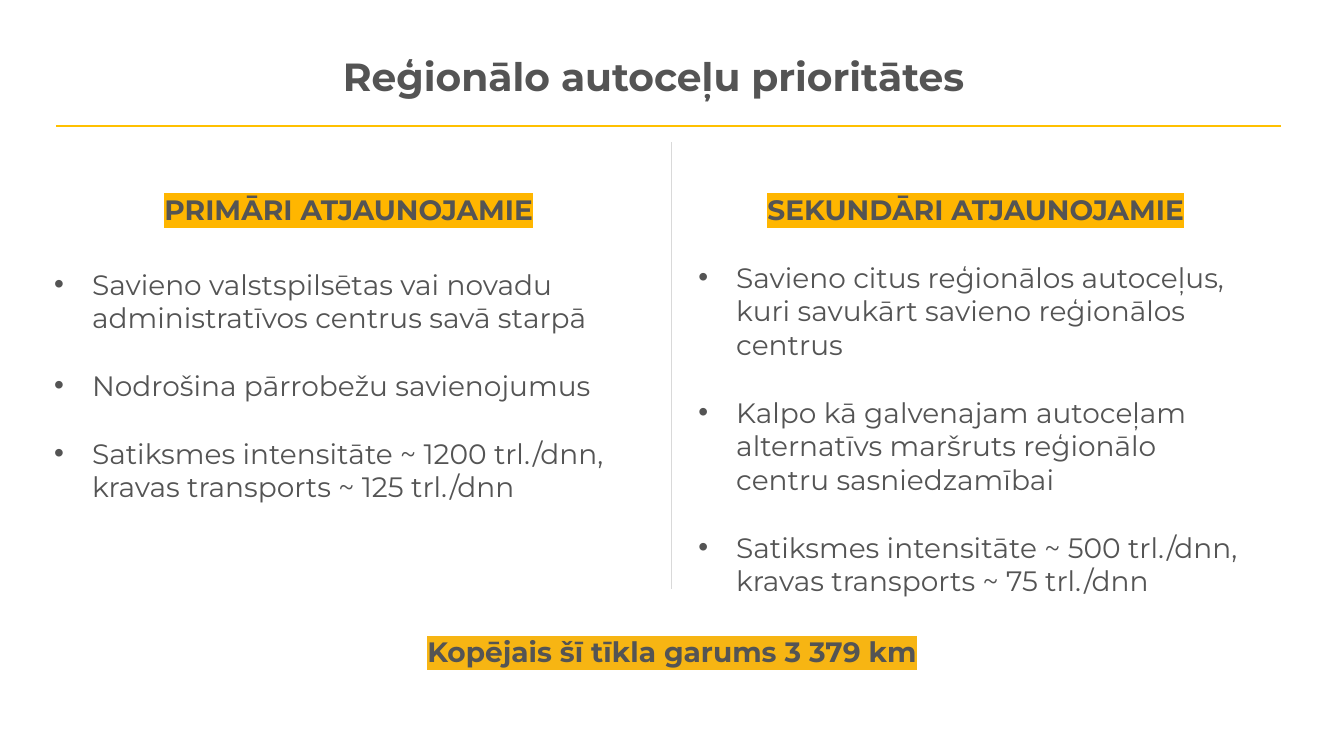
from lxml import etree
from pptx import Presentation
from pptx import util as u
from pptx.dml import color
from pptx.enum import shapes, text
from pptx.oxml import ns

BODY = {"name": "Montserrat", "size": u.Pt(20), "bold": False}
HEADING = {**BODY, "bold": True}
TITLE = {**HEADING, "size": u.Pt(28)}
TEXT_COLOR = "545454"
HIGHLIGHT = "FFB600"


def rgb(value):
    """Turn a hex string into a colour."""
    return color.RGBColor.from_string(value)


def add_line(slide, start, end, line_color, width):
    """Draw a straight rule between two points."""
    connector = slide.shapes.add_connector(
        shapes.MSO_CONNECTOR.STRAIGHT, *(u.Pt(value) for value in start + end))
    connector.line.color.rgb = rgb(line_color)
    connector.line.width = u.Pt(width)
    etree.SubElement(connector._element.spPr, ns.qn("a:effectLst"))


def add_text_box(slide, box):
    """Add a wrapping text box and return its text frame."""
    frame = slide.shapes.add_textbox(*(u.Pt(value) for value in box)).text_frame
    frame.word_wrap = True
    return frame


def write(paragraph, content, formats, highlight=None):
    """Write one formatted run, with an optional highlight."""
    run = paragraph.add_run()
    run.text = content
    for name, value in formats.items():
        setattr(run.font, name, value)
    run.font.color.rgb = rgb(TEXT_COLOR)
    if highlight:
        mark = etree.Element(ns.qn("a:highlight"))
        etree.SubElement(mark, ns.qn("a:srgbClr"), val=highlight)
        run._r.rPr.find(ns.qn("a:solidFill")).addnext(mark)


def add_bullet(paragraph):
    """Give a paragraph a round bullet and a hanging indent."""
    properties = paragraph._p.get_or_add_pPr()
    properties.set("marL", str(u.Pt(27)))
    properties.set("indent", str(-u.Pt(27)))
    etree.SubElement(properties, ns.qn("a:buFont"), typeface="Arial")
    etree.SubElement(properties, ns.qn("a:buChar"), char="•")


def add_centered(slide, box, content, formats, highlight=None):
    """Add a box that starts with one centred line of text."""
    frame = add_text_box(slide, box)
    frame.paragraphs[0].alignment = text.PP_ALIGN.CENTER
    write(frame.paragraphs[0], content, formats, highlight)
    return frame


def add_column(slide, box, heading, items, first_gap):
    """Add a highlighted heading with a bulleted list below it."""
    frame = add_centered(slide, box, heading, HEADING, HIGHLIGHT)
    for index, item in enumerate(items):
        paragraph = frame.add_paragraph()
        paragraph.space_before = u.Pt(24.4 if index else first_gap)
        add_bullet(paragraph)
        write(paragraph, item, BODY)


def add_header(slide, box):
    """Add the title with the yellow rule below it."""
    left, top, width, height = box
    add_centered(slide, box, "Reģionālo autoceļu prioritātes", TITLE)
    rule = top + height + 15.2
    add_line(slide, (left, rule), (left + 875, rule), "FFC000", 2)


def main():
    """Build the slide and save it."""
    presentation = Presentation()
    presentation.slide_width, presentation.slide_height = u.Pt(960), u.Pt(540)
    slide = presentation.slides.add_slide(presentation.slide_layouts[6])
    add_header(slide, (40.2, 33.8, 853.2, 41))
    add_column(slide, (31.7, 133.9, 434.9, 303), "PRIMĀRI ATJAUNOJAMIE", [
        "Savieno valstspilsētas vai novadu administratīvos centrus savā starpā",
        "Nodrošina pārrobežu savienojumus",
        "Satiksmes intensitāte ~ 1200 trl./dnn, kravas transports ~ 125 trl./dnn",
    ], 29.3)
    add_column(slide, (491.8, 133.9, 410.4, 298), "SEKUNDĀRI ATJAUNOJAMIE", [
        "Savieno citus reģionālos autoceļus, kuri savukārt savieno reģionālos centrus",
        "Kalpo kā galvenajam autoceļam alternatīvs maršruts reģionālo centru sasniedzamībai",
        "Satiksmes intensitāte ~ 500 trl./dnn, kravas transports ~ 75 trl./dnn",
    ], 24.4)
    add_centered(slide, (240, 450, 480, 31.5), "Kopējais šī tīkla garums 3 379 km",
                 HEADING, "F7B513")
    add_line(slide, (480, 101.5), (480, 420.5), "D9D9D9", 0.75)
    presentation.save("out.pptx")


if __name__ == "__main__":
    main()
